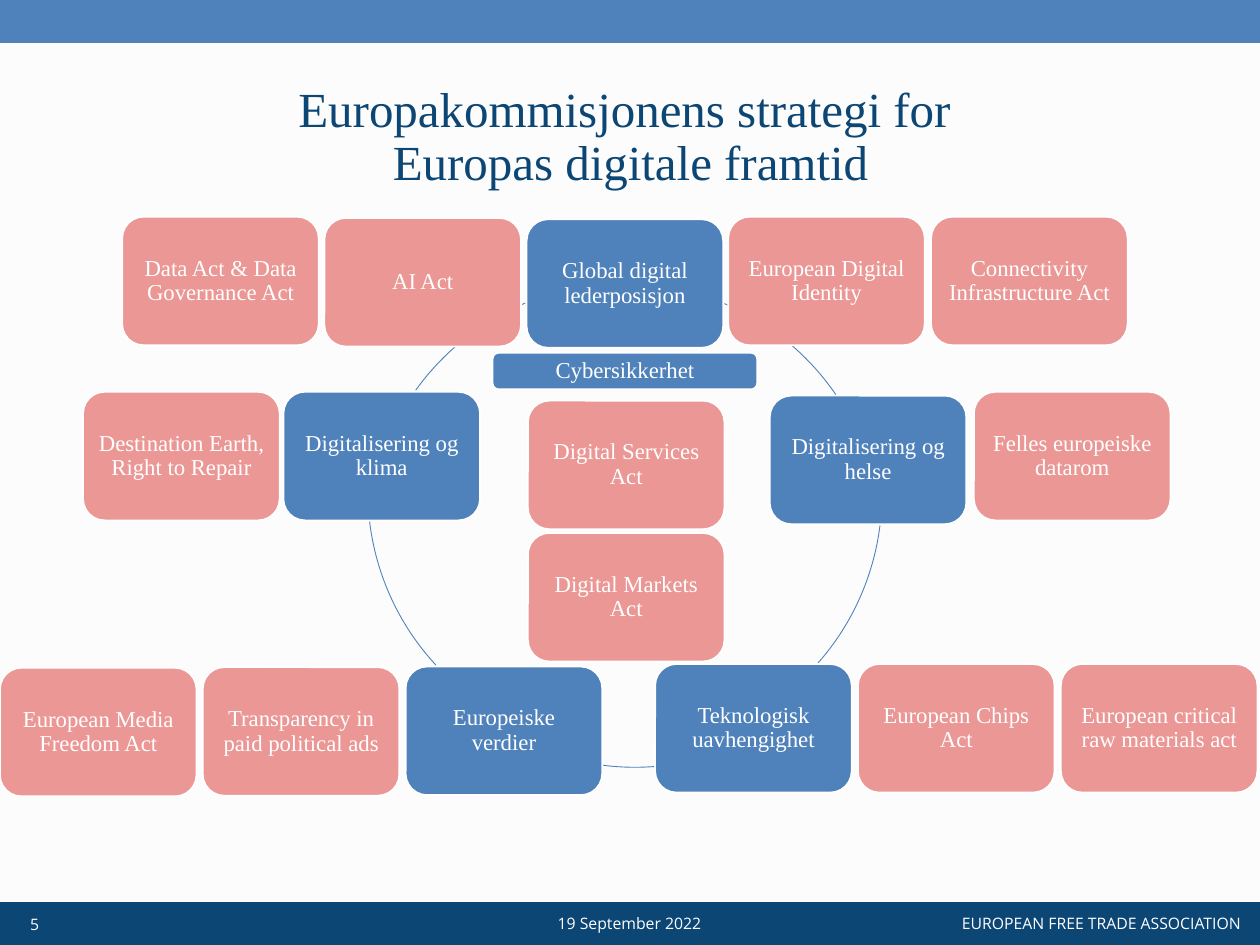
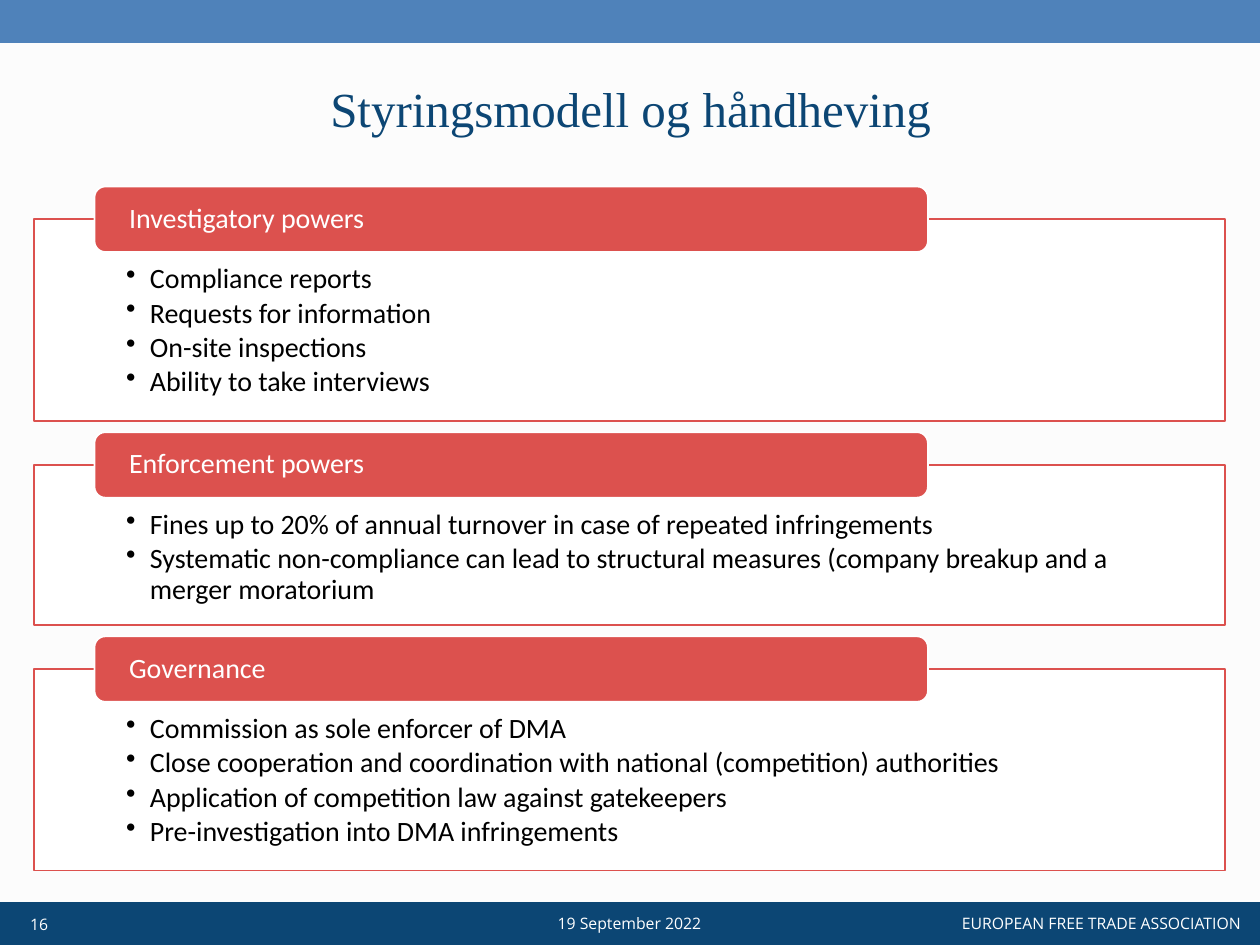
import dataclasses

import lxml.etree
import pptx
import pptx.dml.color
import pptx.enum.shapes
import pptx.enum.text
import pptx.oxml.ns
import pptx.util

SHAPE = pptx.enum.shapes.MSO_SHAPE
ALIGN = pptx.enum.text.PP_ALIGN
ANCHOR = pptx.enum.text.MSO_ANCHOR

CELL = 0.1
COLUMNS, ROWS = 100, 75

NAVY, BLUE, PINK, RED = "0C4674", "4F82BA", "EA9795", "DC514E"
WHITE, BLACK, PAPER = "FFFFFF", "000000", "FCFCFC"
SERIF, SANS, FOOTER_FONT = "Times New Roman", "Calibri", "Open Sans"

CARD_WIDTH, CARD_HEIGHT = 15.6, 10.2
GOALS = {
    "Global digital lederposisjon", "Digitalisering og klima",
    "Digitalisering og helse", "Europeiske verdier", "Teknologisk uavhengighet",
}
CARD_STRIPS = [
    (9.7, 0, 16.05, 0.1, ["Data Act & Data Governance Act", "AI Act",
                          "Global digital lederposisjon"]),
    (57.8, 0, 16.1, 0, ["European Digital Identity", "Connectivity Infrastructure Act"]),
    (6.6, 13.9, 15.9, 0, ["Destination Earth, Right to Repair", "Digitalisering og klima"]),
    (61.1, 14.2, 16.2, -0.3, ["Digitalisering og helse", "Felles europeiske datarom"]),
    (41.9, 14.6, 0, 10.5, ["Digital Services Act", "Digital Markets Act"]),
    (0, 35.8, 16.1, -0.05, ["European Media Freedom Act",
                            "Transparency in paid political ads", "Europeiske verdier"]),
    (52, 35.5, 16.1, 0, ["Teknologisk uavhengighet", "European Chips Act",
                         "European critical raw materials act"]),
]
RING_SIZE = 40.6
RING_ARCS = [
    (29.3, 5.3, 292.9, 325.6), (29.4, 1.7, 7.1, 41.4), (30.1, 3.1, 85.5, 97.4),
    (29.2, 1.5, 137.2, 173.2), (29.2, 5.3, 215.6, 247.4),
]
PANELS = [
    ("Investigatory powers", 4, [
        "Compliance reports", "Requests for information",
        "On-site inspections", "Ability to take interviews"]),
    ("Enforcement powers", 3, [
        "Fines up to 20% of annual turnover in case of repeated infringements",
        "Systematic non-compliance can lead to structural measures "
        "(company breakup and a merger moratorium"]),
    ("Governance", 4, [
        "Commission as sole enforcer of DMA",
        "Close cooperation and coordination with national (competition) authorities",
        "Application of competition law against gatekeepers",
        "Pre-investigation into DMA infringements"]),
]


@dataclasses.dataclass
class Box:
    """A region measured in grid columns and rows."""
    left: float
    top: float
    width: float
    height: float

    def inside(self, left, top, width, height):
        """Return a box placed relative to this one."""
        return Box(self.left + left, self.top + top, width, height)

    def lengths(self):
        """Return the four lengths for python-pptx."""
        return [pptx.util.Inches(CELL * cells)
                for cells in (self.left, self.top, self.width, self.height)]


def color(value):
    """Turn a hex string into a colour."""
    return pptx.dml.color.RGBColor.from_string(value)


def add_bullet(para, indent):
    """Give a paragraph a round bullet with a hanging indent."""
    properties = para._p.get_or_add_pPr()
    properties.set("marL", str(pptx.util.Inches(indent)))
    properties.set("indent", str(-pptx.util.Inches(indent)))
    bullet = lxml.etree.SubElement(properties, pptx.oxml.ns.qn("a:buChar"))
    bullet.set("char", "•")


def write(shape, text, *, size, font, fill, align=ALIGN.CENTER, anchor=ANCHOR.MIDDLE,
          margins=(0.1, 0.05, 0.1, 0.05), spacing=0.9, after=0, bullet=None):
    """Fill a shape with text, one paragraph per line."""
    frame = shape.text_frame
    frame.word_wrap = True
    frame.vertical_anchor = anchor
    (frame.margin_left, frame.margin_top,
     frame.margin_right, frame.margin_bottom) = map(pptx.util.Inches, margins)
    for index, line in enumerate(text.split("\n")):
        para = frame.add_paragraph() if index else frame.paragraphs[0]
        para.text = line
        if bullet:
            add_bullet(para, bullet)
        para.alignment = align
        para.line_spacing = spacing
        para.space_after = pptx.util.Pt(after)
        for span in para.runs:
            span.font.size = pptx.util.Pt(size)
            span.font.name = font
            span.font.color.rgb = color(fill)


def add_text(page, box, text, **style):
    """Add a text box."""
    write(page.shapes.add_textbox(*box.lengths()), text, **style)


def add_shape(page, kind, box, fill=None, line=None, weight=1):
    """Add a preset shape without shadow."""
    shape = page.shapes.add_shape(kind, *box.lengths())
    shape.shadow.inherit = False
    if fill:
        shape.fill.solid()
        shape.fill.fore_color.rgb = color(fill)
    else:
        shape.fill.background()
    if line:
        shape.line.color.rgb = color(line)
        shape.line.width = pptx.util.Pt(weight)
    else:
        shape.line.fill.background()
    return shape


def add_footer(page, box, number):
    """Draw the footer band with number, date and organisation."""
    add_shape(page, SHAPE.RECTANGLE, box, NAVY)
    style = dict(size=9, font=FOOTER_FONT, fill=WHITE, spacing=1)
    add_text(page, box.inside(1.4, 0.1, 12.1, 3.3), str(number), align=ALIGN.LEFT, **style)
    add_text(page, box.inside(38.5, 0, 22.9, 3.4), "19 September 2022", **style)
    add_text(page, box.inside(74.8, 0.4, 25.2, 2.5), "EUROPEAN FREE TRADE ASSOCIATION",
             anchor=ANCHOR.TOP, **style)


def add_page(deck, title, number):
    """Add a slide with background, bands, title and footer."""
    page = deck.slides.add_slide(deck.slide_layouts[6])
    page.background.fill.solid()
    page.background.fill.fore_color.rgb = color(PAPER)
    add_shape(page, SHAPE.RECTANGLE, Box(0, 0, COLUMNS, 3.4), BLUE)
    add_footer(page, Box(0, 71.6, COLUMNS, 3.4), number)
    add_text(page, Box(2.6, 6.3, 94.9, 7.4), title, size=28, font=SERIF, fill=NAVY,
             anchor=ANCHOR.TOP)
    return page


def add_card(page, box, text, fill):
    """Draw a rounded card with centred text."""
    card = add_shape(page, SHAPE.ROUNDED_RECTANGLE, box, fill, WHITE)
    write(card, text, size=13, font=SERIF, fill=WHITE, margins=(0.05,) * 4)


def add_strategy_map(page, box):
    """Draw the ring of goals and the acts around it."""
    for left, top, start, end in RING_ARCS:
        arc = add_shape(page, SHAPE.ARC, box.inside(left, top, RING_SIZE, RING_SIZE),
                        line=BLUE, weight=0.5)
        arc.adjustments[0], arc.adjustments[1] = 0.6 * start, 0.6 * end
    for left, top, step_right, step_down, texts in CARD_STRIPS:
        for index, text in enumerate(texts):
            place = box.inside(left + index * step_right, top + index * step_down,
                               CARD_WIDTH, CARD_HEIGHT)
            add_card(page, place, text, BLUE if text in GOALS else PINK)
    add_card(page, box.inside(39.1, 10.8, 21, 2.9), "Cybersikkerhet", BLUE)


def add_panel(page, box, heading, points):
    """Draw a framed bullet list with a heading tab on its upper edge."""
    tab_height = 5.2
    frame_box = box.inside(0, tab_height / 2, box.width, box.height - tab_height / 2)
    frame = add_shape(page, SHAPE.RECTANGLE, frame_box, WHITE, RED)
    write(frame, "\n".join(points), size=16, font=SANS, fill=BLACK, align=ALIGN.LEFT,
          anchor=ANCHOR.TOP, margins=(0.73, 0.36, 0.73, 0.12), after=2.4, bullet=0.19)
    tab = add_shape(page, SHAPE.ROUNDED_RECTANGLE,
                    box.inside(4.8, 0, 0.7 * box.width, tab_height), RED, WHITE)
    write(tab, heading, size=16, font=SANS, fill=WHITE, align=ALIGN.LEFT,
          margins=(0.25, 0, 0.25, 0))


def add_panel_stack(page, box):
    """Stack the panels with equal gaps, each as tall as its lines need."""
    top = 0
    for heading, lines, points in PANELS:
        height = 5.4 + 3.3 * lines
        add_panel(page, box.inside(0, top, box.width, height), heading, points)
        top += height + 0.9


def main():
    """Build and save the deck."""
    deck = pptx.Presentation()
    deck.slide_width = pptx.util.Inches(CELL * COLUMNS)
    deck.slide_height = pptx.util.Inches(CELL * ROWS)
    strategy = add_page(
        deck, "Europakommisjonens strategi for \vEuropas digitale framtid", 5)
    add_strategy_map(strategy, Box(0, 17.2, COLUMNS, 46))
    governance = add_page(deck, "Styringsmodell og håndheving", 16)
    add_panel_stack(governance, Box(2.7, 14.8, 94.5, 54.3))
    deck.save("out.pptx")


if __name__ == "__main__":
    main()
